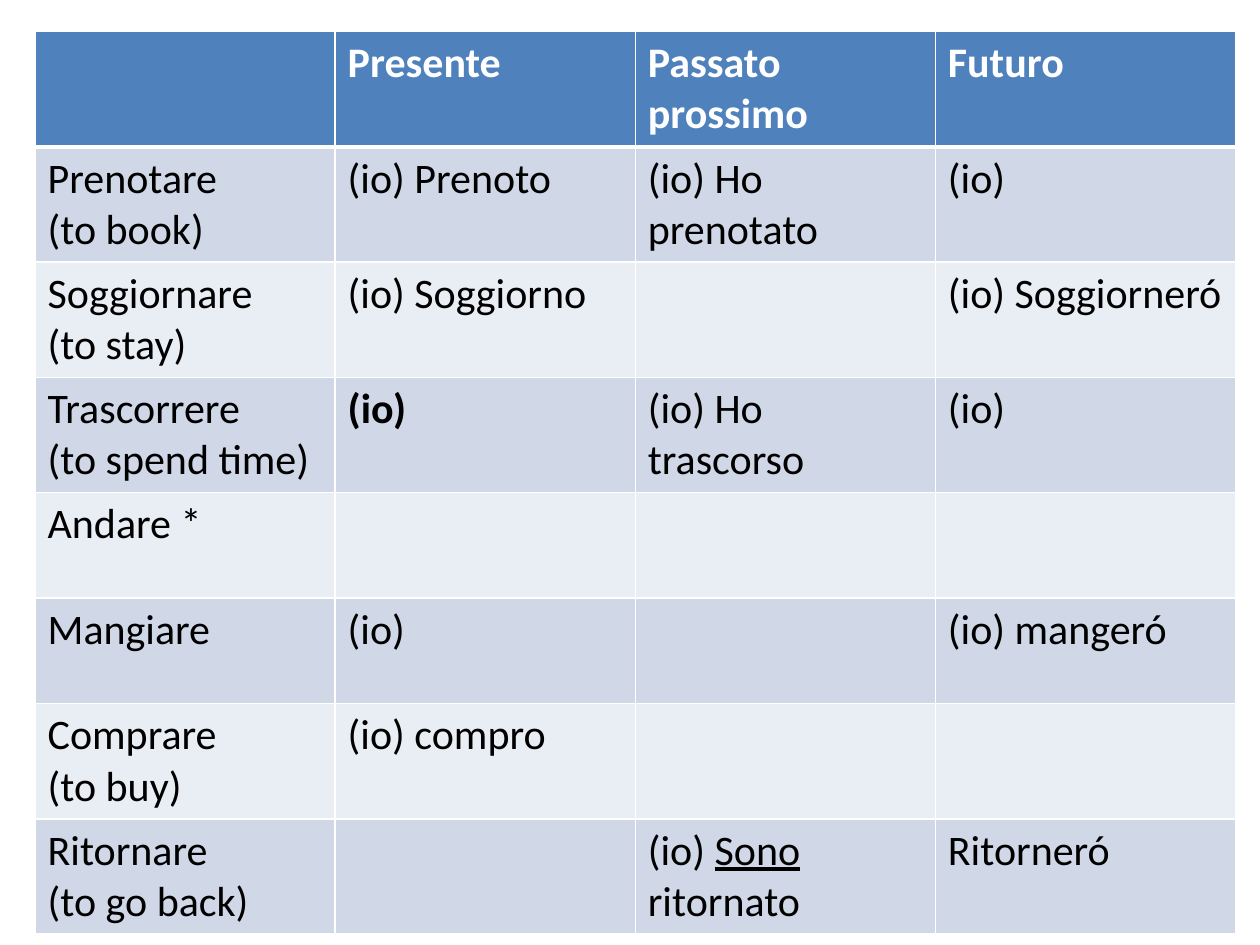
import pptx
import pptx.dml.color
import pptx.oxml
import pptx.oxml.ns
import pptx.util

Pt = pptx.util.Pt

WHITE, BLACK = "FFFFFF", "000000"
HEADER_FILL = "4F81BD"
BAND_FILLS = ("D0D8E8", "E9EDF4")

# A cell is a list of paragraphs, a paragraph a list of (text, mark) runs.
# Plain strings stand for unmarked text, with one paragraph per line.
VERBS = [
    ["", "Presente", "Passato prossimo", "Futuro"],
    ["Prenotare\n(to book)", "(io) Prenoto", "(io) Ho prenotato", "(io)"],
    ["Soggiornare\n(to stay)", "(io) Soggiorno", "", "(io) Soggiorneró"],
    ["Trascorrere\n(to spend time)", [[("(io)", "bold")]], "(io) Ho trascorso", "(io)"],
    ["Andare *", "", "", ""],
    ["Mangiare", "(io)", "", "(io) mangeró"],
    ["Comprare\n(to buy)", "(io) compro", "", ""],
    ["Ritornare\n(to go back)", "",
     [[("(io) ", None), ("Sono ", "underline"), ("ritornato", None)]], "Ritorneró"],
]


def rgb(value):
    return pptx.dml.color.RGBColor.from_string(value)


class SlideBuilder:
    font = "Calibri"
    size = 24

    def __init__(self, slide):
        self.slide = slide

    def border(self, cell, side, width):
        ns = pptx.oxml.ns.nsdecls("a")
        cell._tc.get_or_add_tcPr().append(pptx.oxml.parse_xml(
            f'<a:ln{side} {ns} w="{Pt(width)}"><a:solidFill>'
            f'<a:srgbClr val="{WHITE}"/></a:solidFill></a:ln{side}>'))

    def cell_text(self, cell, content, color, bold):
        if isinstance(content, str):
            content = [[(line, None)] for line in content.split("\n")]
        tf = cell.text_frame
        for i, runs in enumerate(content):
            p = tf.add_paragraph() if i else tf.paragraphs[0]
            p.font.name, p.font.size = self.font, Pt(self.size)
            p.font.color.rgb = rgb(color)
            p.font.bold = bold or runs[0][1] == "bold"
            for text, mark in runs:
                if text:
                    r = p.add_run()
                    r.text = text
                    if mark == "underline":
                        r.font.underline = True

    def table(self, rows, left, top, col_width, header_height, row_height):
        """Add a banded table whose first row is the header."""
        width = col_width * len(rows[0])
        height = header_height + row_height * (len(rows) - 1)
        table = self.slide.shapes.add_table(
            len(rows), len(rows[0]), Pt(left), Pt(top), Pt(width), Pt(height)).table
        for col in table.columns:
            col.width = Pt(col_width)
        for i, row in enumerate(rows):
            header = i == 0
            table.rows[i].height = Pt(header_height if header else row_height)
            fill = HEADER_FILL if header else BAND_FILLS[(i - 1) % 2]
            for j, content in enumerate(row):
                cell = table.cell(i, j)
                self.cell_text(cell, content, WHITE if header else BLACK, header)
                for side in "LRTB":
                    heavy = (i, side) in ((0, "B"), (1, "T"))
                    self.border(cell, side, 3 if heavy else 1)
                cell.fill.solid()
                cell.fill.fore_color.rgb = rgb(fill)


def main():
    prs = pptx.Presentation()
    prs.slide_width, prs.slide_height = Pt(720), Pt(540)
    blank = prs.slide_layouts[6]
    s = SlideBuilder(prs.slides.add_slide(blank))
    s.table(VERBS, left=20, top=18, col_width=171.5, header_height=66, row_height=60.4)
    prs.save("out.pptx")


if __name__ == "__main__":
    main()
